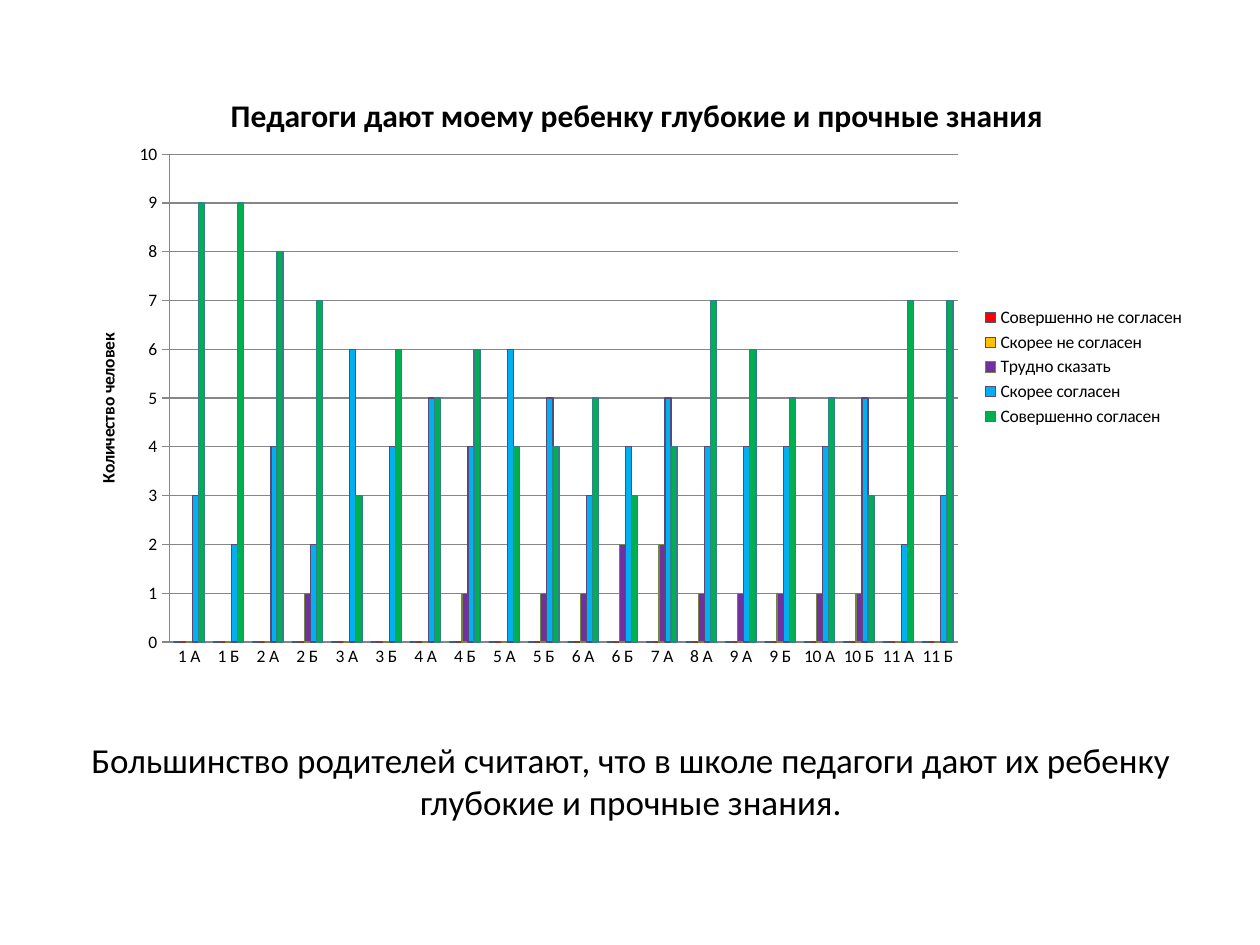
"""Build a slide with a clustered column chart of parents' answers by class and a conclusion below it."""
from typing import NamedTuple

from lxml.etree import SubElement
from pptx import Presentation
from pptx.chart.data import CategoryChartData
from pptx.dml.color import RGBColor
from pptx.enum.chart import XL_CHART_TYPE as ChartType
from pptx.enum.chart import XL_LEGEND_POSITION as LegendPosition
from pptx.enum.chart import XL_TICK_MARK as TickMark
from pptx.enum.text import MSO_ANCHOR as Anchor
from pptx.enum.text import PP_ALIGN as Align
from pptx.oxml.ns import qn
from pptx.util import Emu, Pt

PX = 914400 // 126
FONT = "Calibri"
COLORS = {
    "text": "000000", "grid": "868686",
    "red": "FF0000", "amber": "FFC000", "purple": "7030A0", "blue": "00B0F0", "green": "00B050",
    "red_edge": "385D8A", "amber_edge": "8C3836", "purple_edge": "71893F",
    "blue_edge": "5C4776", "green_edge": "357D91",
}


class Area(NamedTuple):
    left: int
    top: int
    width: int
    height: int

    def emu(self) -> list[Emu]:
        return [Emu(length * PX) for length in self]


class Answer(NamedTuple):
    name: str
    color: str
    counts: list[int]


CHART = Area(64, 55, 1134, 624)
PLOT = Area(169, 154, 788, 488)
CONCLUSION = Area(64, 701, 1134, 158)
CLASSES = ["1 А", "1 Б", "2 А", "2 Б", "3 А", "3 Б", "4 А", "4 Б", "5 А", "5 Б",
           "6 А", "6 Б", "7 А", "8 А", "9 А", "9 Б", "10 А", "10 Б", "11 А", "11 Б"]
ANSWERS = [
    Answer("Совершенно не согласен", "red", [0] * len(CLASSES)),
    Answer("Скорее не согласен", "amber", [0] * len(CLASSES)),
    Answer("Трудно сказать", "purple", [0, 0, 0, 1, 0, 0, 0, 1, 0, 1, 1, 2, 2, 1, 1, 1, 1, 1, 0, 0]),
    Answer("Скорее согласен", "blue", [3, 2, 4, 2, 6, 4, 5, 4, 6, 5, 3, 4, 5, 4, 4, 4, 4, 5, 2, 3]),
    Answer("Совершенно согласен", "green", [9, 9, 8, 7, 3, 6, 5, 6, 4, 4, 5, 3, 4, 7, 6, 5, 5, 3, 7, 7]),
]


def rgb(name: str) -> RGBColor:
    return RGBColor.from_string(COLORS[name])


def style_font(font, size: int, bold: bool = False) -> None:
    font.name, font.size, font.bold = FONT, Pt(size), bold
    font.color.rgb = rgb("text")


def add_run(para, text: str, size: int, bold: bool = False) -> None:
    run = para.add_run()
    run.text = text
    style_font(run.font, size, bold)


def place(element, left: int, top: int, width: int = 0, height: int = 0) -> None:
    """Fix a chart part at a slide position given in px."""
    for old in element.findall(qn("c:layout")):
        element.remove(old)
    layout = SubElement(element, qn("c:layout"))
    text = element.find(qn("c:tx"))
    element.insert(0 if text is None else element.index(text) + 1, layout)
    manual = SubElement(layout, qn("c:manualLayout"))
    settings = {"xMode": "edge", "yMode": "edge",
                "x": round((left - CHART.left) / CHART.width, 3),
                "y": round((top - CHART.top) / CHART.height, 3)}
    if width:
        settings = {"layoutTarget": "inner", **settings,
                    "w": round(width / CHART.width, 3), "h": round(height / CHART.height, 3)}
    for tag, value in settings.items():
        SubElement(manual, qn(f"c:{tag}")).set("val", str(value))


def add_answer_chart(page) -> None:
    data = CategoryChartData(number_format="0")
    data.categories = CLASSES
    for answer in ANSWERS:
        data.add_series(answer.name, answer.counts)
    chart = page.shapes.add_chart(ChartType.COLUMN_CLUSTERED, *CHART.emu(), data).chart
    style_font(chart.font, 10)

    chart.has_title = True
    title = chart.chart_title
    add_run(title.text_frame.paragraphs[0], "Педагоги дают моему ребенку глубокие и прочные знания", 18, True)
    title.include_in_layout = False
    place(title._element, 225, 88)

    chart.has_legend = True
    chart.legend.position = LegendPosition.RIGHT
    chart.legend.include_in_layout = False
    style_font(chart.legend.font, 10)

    plot = chart.plots[0]
    plot.gap_width, plot.overlap, plot.vary_by_categories = 150, 0, False
    for series, answer in zip(plot.series, ANSWERS):
        series.format.fill.solid()
        series.format.fill.fore_color.rgb = rgb(answer.color)
        series.format.line.color.rgb = rgb(f"{answer.color}_edge")
        series.format.line.width = Pt(0.75)
    place(chart._chartSpace.chart.plotArea, *PLOT)

    values, classes = chart.value_axis, chart.category_axis
    for axis, tick in ((values, TickMark.OUTSIDE), (classes, TickMark.NONE)):
        axis.major_tick_mark, axis.minor_tick_mark = tick, TickMark.NONE
        axis.format.line.color.rgb = rgb("grid")
        style_font(axis.tick_labels.font, 10)
    values.minimum_scale, values.maximum_scale, values.major_unit = 0, 10, 1
    values.has_major_gridlines = True
    values.major_gridlines.format.line.color.rgb = rgb("grid")
    values.has_title = True
    add_run(values.axis_title.text_frame.paragraphs[0], "Количество человек", 10, True)
    frame_properties = values.axis_title.text_frame._txBody.bodyPr
    frame_properties.set("rot", "-5400000")
    frame_properties.set("vert", "horz")
    place(values.axis_title._element, 94, 330)


def add_conclusion(page) -> None:
    box = page.shapes.add_textbox(*CONCLUSION.emu())
    frame = box.text_frame
    frame.word_wrap, frame.vertical_anchor = True, Anchor.MIDDLE
    para = frame.paragraphs[0]
    para.alignment = Align.CENTER
    add_run(para, "Большинство родителей считают, что в школе педагоги дают их ребенку "
                  "глубокие и прочные знания.", 20)


def main() -> None:
    deck = Presentation()
    deck.slide_width, deck.slide_height = Emu(1260 * PX), Emu(945 * PX)
    page = deck.slides.add_slide(deck.slide_layouts[6])
    add_conclusion(page)
    add_answer_chart(page)
    deck.save("out.pptx")


if __name__ == "__main__":
    main()
